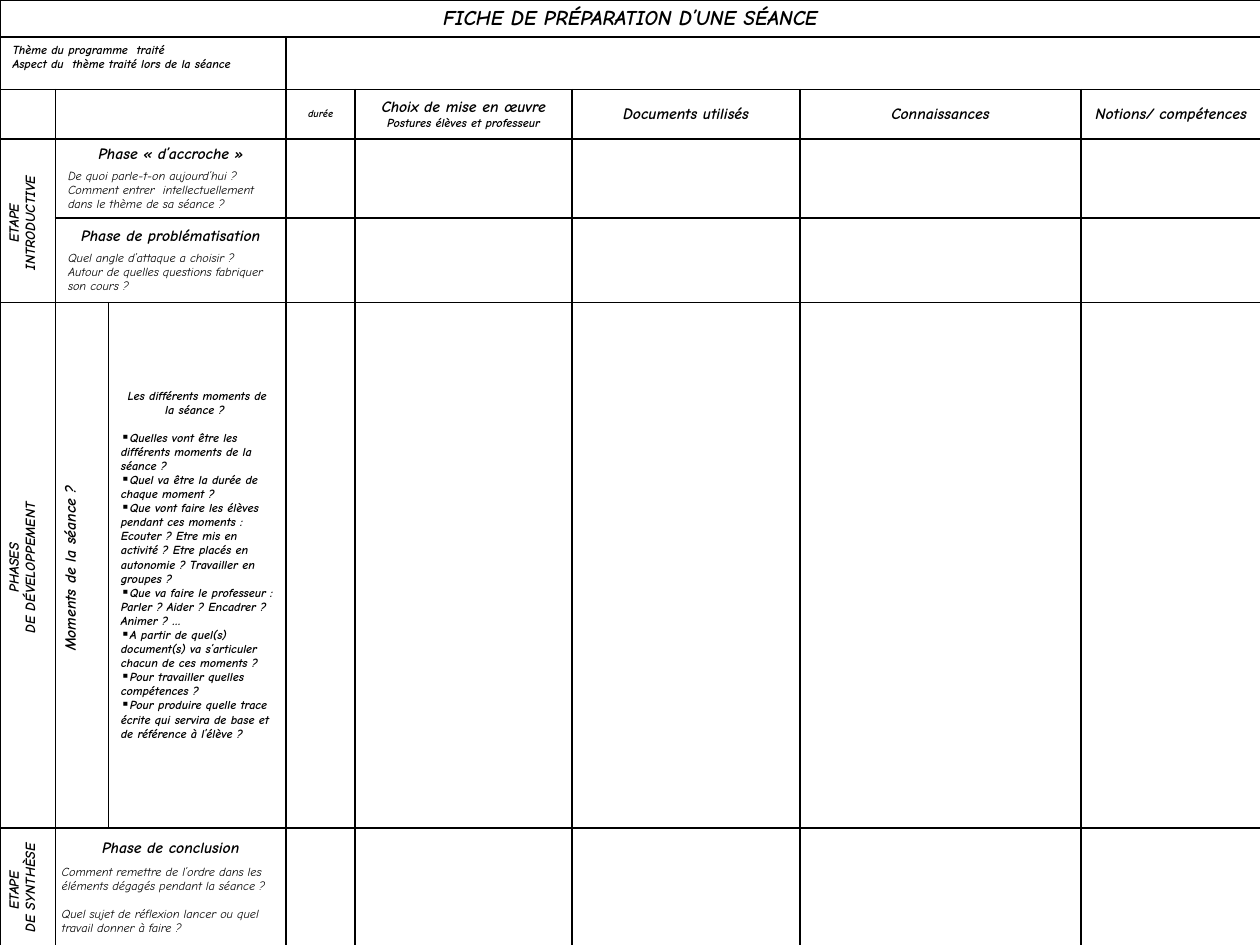
from lxml import etree
from pptx import Presentation
from pptx.dml.color import RGBColor
from pptx.enum.text import MSO_ANCHOR, PP_ALIGN
from pptx.oxml import parse_xml
from pptx.oxml.ns import nsdecls, qn
from pptx.util import Inches, Pt

BLACK = RGBColor(0, 0, 0)
WHITE = RGBColor(255, 255, 255)
MIDDLE = MSO_ANCHOR.MIDDLE
CENTER = PP_ALIGN.CENTER
LEFT = PP_ALIGN.LEFT

COLS = [0.44, 0.42, 1.41, 0.55, 1.72, 1.81, 2.23, 1.43]
ROWS = [0.29, 0.42, 0.39, 0.63, 0.67, 4.17, 0.95]
MERGES = [(0, 0, 0, 7), (1, 0, 1, 2), (1, 3, 1, 7), (2, 1, 2, 2),
          (3, 0, 4, 0), (3, 1, 3, 2), (4, 1, 4, 2), (6, 1, 6, 2)]
QUESTIONS = [
    "Quelles vont être les différents moments de la séance ?",
    "Quel va être la durée de chaque moment ?",
    "Que vont faire les élèves pendant ces moments : Ecouter ? Etre mis en "
    "activité ? Etre placés en autonomie ? Travailler en groupes ?",
    "Que va faire le professeur : Parler ? Aider ? Encadrer ? Animer ? …",
    "A partir de quel(s) document(s) va s’articuler chacun de ces moments ?",
    "Pour travailler quelles compétences ?",
    "Pour produire quelle trace écrite qui servira de base et de référence "
    "à l’élève ?",
]


def add_text(tf, text, size=7, bold=True, align=LEFT, before=0, bullet=None):
    p = tf.paragraphs[0]
    if p.runs:
        p = tf.add_paragraph()
    p.alignment = align
    p.space_before = Pt(before)
    if bullet:
        etree.SubElement(p._p.get_or_add_pPr(), qn("a:buChar"), char=bullet)
    r = p.add_run()
    r.text = text
    font = r.font
    font.name = "Comic Neue"
    font.size = Pt(size)
    font.bold = bold
    font.italic = True
    font.color.rgb = BLACK


class LessonSheet:
    def __init__(self, prs):
        self.s = prs.slides.add_slide(prs.slide_layouts[6])
        self.table = None

    def grid(self, cols, rows, merges):
        frame = self.s.shapes.add_table(len(rows), len(cols), 0, 0,
                                        Inches(sum(cols)), Inches(sum(rows)))
        self.table = frame.table
        self.table.first_row = False
        self.table.horz_banding = False
        for col, width in zip(self.table.columns, cols):
            col.width = Inches(width)
        for row, height in zip(self.table.rows, rows):
            row.height = Inches(height)
        for top, left, bottom, right in merges:
            self.table.cell(top, left).merge(self.table.cell(bottom, right))
        for cell in self.table.iter_cells():
            cell.margin_top = cell.margin_bottom = 0
            if not cell.is_spanned:
                self.borders(cell)
            cell.fill.solid()
            cell.fill.fore_color.rgb = WHITE

    def borders(self, cell):
        tcPr = cell._tc.get_or_add_tcPr()
        for side in ("lnL", "lnR", "lnT", "lnB"):
            tcPr.append(parse_xml(
                f'<a:{side} {nsdecls("a")} w="{Pt(1)}"><a:solidFill>'
                f'<a:srgbClr val="{BLACK}"/></a:solidFill></a:{side}>'))

    def cell(self, row, col, *lines, anchor=MIDDLE, vertical=False, inset=None):
        cell = self.table.cell(row, col)
        cell.vertical_anchor = anchor
        cell.margin_top = cell.margin_bottom = Inches(0.05)
        if inset:
            cell.margin_left = cell.margin_right = Inches(inset)
        if vertical:
            cell._tc.get_or_add_tcPr().set("vert", "vert270")
        for text, style in lines:
            add_text(cell.text_frame, text, **style)

    def heading(self, row, col, text, size=9, subtitle=None):
        lines = [(text, dict(size=size, align=CENTER))]
        if subtitle:
            lines.append((subtitle, dict(align=CENTER)))
        self.cell(row, col, *lines)

    def side_label(self, row, col, *texts, size=8, inset=None):
        lines = [(text, dict(size=size, align=CENTER)) for text in texts]
        self.cell(row, col, *lines, vertical=True, inset=inset)

    def phase(self, row, title, *prompts, gaps=(3.5, 0), inset=None):
        lines = [(title, dict(size=9, align=CENTER))]
        lines += [(text, dict(bold=False, before=gap))
                  for text, gap in zip(prompts, gaps)]
        self.cell(row, 1, *lines, inset=inset)


def main():
    prs = Presentation()
    prs.slide_width = Inches(10)
    prs.slide_height = Inches(7.5)
    sheet = LessonSheet(prs)
    sheet.grid(COLS, ROWS, MERGES)

    sheet.cell(0, 0, ("FICHE DE PRÉPARATION D’UNE SÉANCE",
                      dict(size=12, align=CENTER)), anchor=MSO_ANCHOR.TOP)
    sheet.cell(1, 0, ("Thème du programme  traité", {}),
               ("Aspect du  thème traité lors de la séance", {}),
               anchor=MSO_ANCHOR.TOP)

    sheet.heading(2, 3, "durée", size=6)
    sheet.heading(2, 4, "Choix de mise en œuvre",
                  subtitle="Postures élèves et professeur")
    for col, text in enumerate(["Documents utilisés", "Connaissances",
                                "Notions/ compétences"], start=5):
        sheet.heading(2, col, text)

    sheet.side_label(3, 0, "ETAPE ", "INTRODUCTIVE ")
    sheet.side_label(5, 0, "PHASES ", "DE DÉVELOPPEMENT ")
    sheet.side_label(5, 1, "Moments de la séance ? ", size=9)
    sheet.side_label(6, 0, "ETAPE ", "DE SYNTHÈSE", inset=0.05)

    sheet.phase(3, "Phase « d’accroche »", "De quoi parle-t-on aujourd’hui ?",
                "Comment entrer  intellectuellement dans le thème de sa séance ?")
    sheet.phase(4, "Phase de problématisation", "Quel angle d’attaque a choisir ?",
                "Autour de quelles questions fabriquer son cours ?")
    sheet.phase(6, "Phase de conclusion",
                "Comment remettre de l’ordre dans les éléments dégagés "
                "pendant la séance ?",
                "Quel sujet de réflexion lancer ou quel travail donner à faire ?",
                gaps=(4.5, 8), inset=0.05)

    questions = [(text, dict(bullet="▪", before=0 if i else 8))
                 for i, text in enumerate(QUESTIONS)]
    sheet.cell(5, 2, ("Les différents moments de la séance ? ",
                      dict(align=CENTER)), *questions)
    prs.save("out.pptx")


if __name__ == "__main__":
    main()
